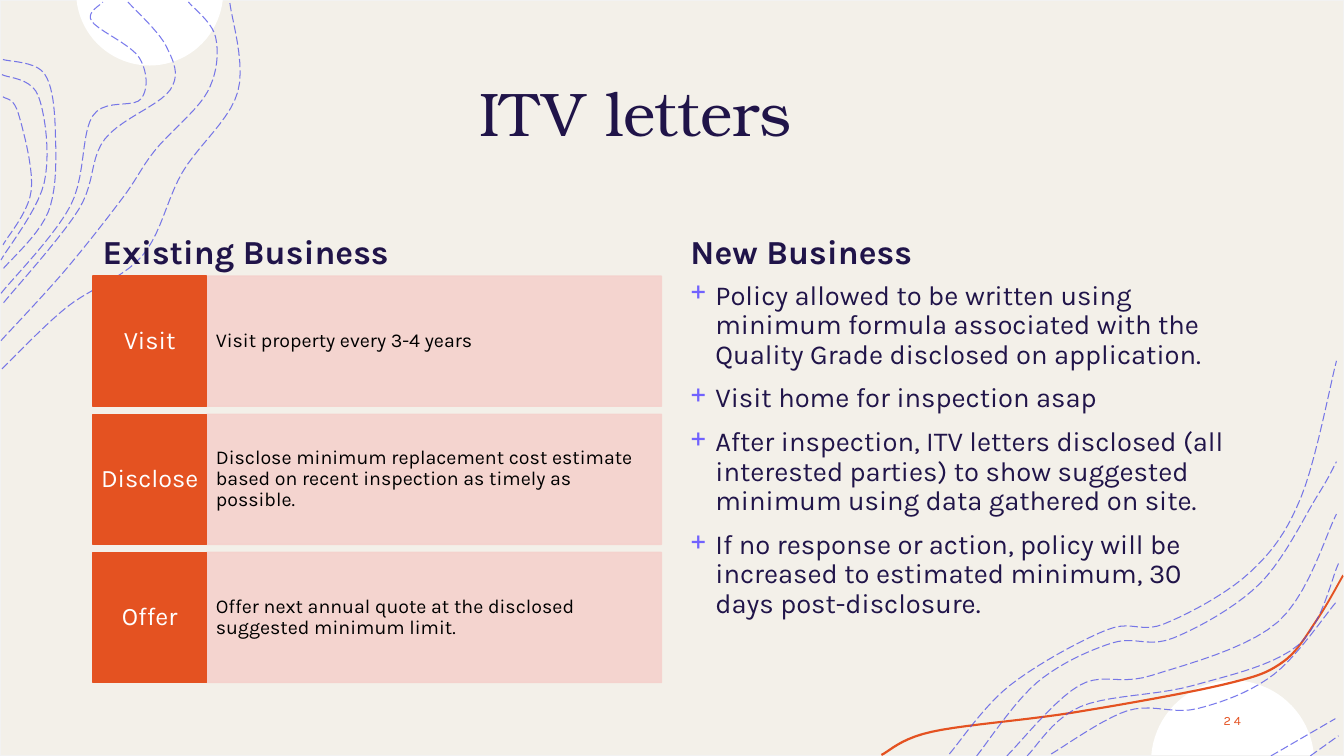
from dataclasses import dataclass
from math import asin, copysign, cos, pi, sin
from typing import Any, NamedTuple

from lxml.etree import SubElement as Sub
from pptx import Presentation
from pptx.dml.color import RGBColor as Rgb
from pptx.enum.dml import MSO_LINE as Dash
from pptx.enum.shapes import MSO_SHAPE as Kind
from pptx.enum.text import MSO_ANCHOR as Anchor, PP_ALIGN as Align
from pptx.oxml.ns import qn
from pptx.util import Cm, Pt

COLORS = {"sand": "F3F0E9", "edge": "F2F2F2", "white": "FFFFFF", "black": "000000",
          "orange": "E45221", "pink": "F5D1CD", "navy": "201449", "wave": "4D4EE6",
          "plus": "7162FE"}
SERIF, SANS = "TeX Gyre Bonum", "Karla"
UNIT = Cm(0.0254)  # curve points count hundredths of an inch
Points = list[tuple[float, float]]


class Box(NamedTuple):
    left: float
    top: float
    width: float
    height: float


@dataclass
class Style:
    size: float
    color: str
    face: str = SANS
    bold: bool = False
    align: Any = Align.LEFT
    anchor: Any = Anchor.MIDDLE
    lead: float = 1.0
    before: float = 0
    track: int = 0
    inset: tuple[float, float] = (0.25, 0.13)
    mark: str = ""


@dataclass
class Label:
    box: Box
    lines: list[str]
    style: Style


@dataclass
class Step:
    name: str
    text: str


HEAD = Style(24, "navy", bold=True, anchor=Anchor.BOTTOM, lead=1.1)
TAG = Style(18, "white", align=Align.CENTER, lead=0.9, inset=(0.15, 0.33))
NOTE = Style(14, "black", lead=0.9, inset=(0.23, 0.84))
LIST = Style(19.6, "navy", anchor=Anchor.TOP, lead=0.9, before=10, mark="+")

LABELS = [
    Label(Box(1.42, 0.99, 29.21, 3.68), ["ITV letters"],
          Style(44, "navy", SERIF, align=Align.CENTER)),
    Label(Box(2.34, 4.67, 14.33, 2.29), ["Existing Business"], HEAD),
    Label(Box(17.15, 4.67, 14.4, 2.29), ["New Business"], HEAD),
    Label(Box(17.15, 6.96, 14.4, 10.24), [
        "Policy allowed to be written using minimum formula associated with the "
        "Quality Grade disclosed on application.",
        "Visit home for inspection asap",
        "After inspection, ITV letters disclosed (all interested parties) to show "
        "suggested minimum using data gathered on site.",
        "If no response or action, policy will be increased to estimated minimum, "
        "30 days post-disclosure."], LIST),
    Label(Box(27.51, 17.65, 4.01, 1.02), ["24"],
          Style(9, "orange", align=Align.RIGHT, track=200)),
]
STEPS = [
    Step("Visit", "Visit property every 3-4 years"),
    Step("Disclose", "Disclose minimum replacement cost estimate based on recent "
                     "inspection as timely as possible."),
    Step("Offer", "Offer next annual quote at the disclosed suggested minimum limit."),
]
WAVES: list[Points] = [
    # Top left
    [(2, 366), (66, 305), (141, 254), (181, 171), (236, 91), (228, 2)],
    [(1, 338), (64, 269), (122, 196), (154, 149), (206, 91), (214, 37), (187, 2)],
    [(127, 2), (165, 46), (169, 89), (104, 138), (78, 208), (3, 301)],
    [(1, 291), (70, 204), (92, 115), (140, 98), (138, 57), (91, 21), (102, 2)],
    [(3, 59), (44, 73), (55, 132), (48, 210), (2, 268)],
    [(2, 74), (38, 95), (44, 181), (1, 258)],
    [(3, 96), (18, 112), (31, 189), (3, 243)],
    # Bottom right
    [(942, 748), (1002, 680), (1098, 625), (1155, 619), (1240, 568), (1291, 493), (1326, 358)],
    [(969, 750), (1029, 677), (1103, 638), (1164, 633), (1250, 579), (1307, 492), (1326, 458)],
    [(1300, 750), (1328, 730)],
    [(1261, 750), (1325, 713)],
    [(1043, 748), (1119, 705), (1188, 703), (1264, 669), (1326, 597)],
    [(1019, 750), (1072, 701), (1184, 680), (1288, 640), (1328, 559)],
    [(999, 750), (1071, 680), (1143, 670), (1268, 617), (1326, 510)],
]
RIBBON: Points = [(875, 750), (925, 727), (1065, 708), (1215, 680), (1273, 658), (1307, 616),
                  (1333, 572)]


def apply(target: Any, values: dict[str, Any]) -> None:
    for name, value in values.items():
        setattr(target, name, value)


def smooth(points: Points, parts: int = 10) -> Points:
    """Run a Catmull-Rom curve through the points."""
    ends = [points[0], *points, points[-1]]
    path = [points[0]]
    for quad in zip(ends, ends[1:], ends[2:], ends[3:]):
        for t in (n / parts for n in range(1, parts + 1)):
            path.append(tuple(
                b + ((c - a) * t + (2 * a - 5 * b + 4 * c - d) * t**2
                     + (3 * b - a - 3 * c + d) * t**3) / 2
                for a, b, c, d in zip(*quad)))
    return path


def arc(x: float, y: float, radius: float, edge: float) -> Points:
    """Trace the part of a circle that a level edge leaves in view."""
    start = asin((edge - y) / radius)
    sweep = copysign(pi, 375 - y) - 2 * start
    turns = [start + sweep * n / 40 for n in range(41)]
    return [(x + radius * cos(a), y + radius * sin(a)) for a in turns]


def paint(shape: Any, fill: str = "", line: str = "", width: float = 1, alpha: int = 100) -> None:
    shape.shadow.inherit = False
    for part, color in ((shape.fill, fill), (shape.line.fill, line)):
        if color:
            part.solid()
            part.fore_color.rgb = Rgb.from_string(COLORS[color])
        else:
            part.background()
    if line:
        shape.line.width = Pt(width)
    if alpha < 100:
        for node in list(shape._element.spPr.iter(qn("a:srgbClr"))):
            Sub(node, qn("a:alpha"), val=str(alpha * 1000))


def draw(shapes: Any, points: Points, closed: bool) -> Any:
    spots = [(round(x * UNIT), round(y * UNIT)) for x, y in points]
    pen = shapes.build_freeform(*spots[0])
    pen.add_line_segments(spots[1:], close=closed)
    return pen.convert_to_shape()


def write(shape: Any, lines: list[str], style: Style) -> None:
    frame = shape.text_frame
    side, rim = map(Cm, style.inset)
    apply(frame, {"word_wrap": True, "vertical_anchor": style.anchor, "margin_left": side,
                  "margin_right": side, "margin_top": rim, "margin_bottom": rim})
    for n, text in enumerate(lines):
        para = frame.add_paragraph() if n else frame.paragraphs[0]
        if style.mark:
            props = para._p.get_or_add_pPr()
            props.attrib.update({"marL": str(Cm(0.63)), "indent": str(-Cm(0.63))})
            Sub(Sub(props, qn("a:buClr")), qn("a:srgbClr"), val=COLORS["plus"])
            Sub(props, qn("a:buChar"), char=style.mark)
        apply(para, {"alignment": style.align, "line_spacing": style.lead,
                     "space_before": Pt(style.before if n else 0)})
        run = para.add_run()
        run.text = text
        apply(run.font, {"name": style.face, "size": Pt(style.size), "bold": style.bold})
        run.font.color.rgb = Rgb.from_string(COLORS[style.color])
        if style.track:
            run.font._element.set("spc", str(style.track))


def block(shapes: Any, box: Box, color: str, edge: str, alpha: int = 100) -> Any:
    shape = shapes.add_shape(Kind.RECTANGLE, *map(Cm, box))
    paint(shape, color, edge, alpha=alpha)
    return shape


def main() -> None:
    deck = Presentation()
    apply(deck, {"slide_width": Cm(33.87), "slide_height": Cm(19.05)})
    shapes = deck.slides.add_slide(deck.slide_layouts[6]).shapes

    # Backdrop
    block(shapes, Box(0, 0, 33.87, 19.05), "sand", "edge")
    for disc in (arc(148.5, -8, 73, 0), arc(1223, 756, 81, 749)):
        paint(draw(shapes, disc, True), "white")
    lower = smooth(RIBBON)
    upper = [(x - 1, y - 2) for x, y in reversed(lower)]
    paint(draw(shapes, lower + upper, True), "orange")
    for points in WAVES:
        wave = draw(shapes, smooth(points), False)
        paint(wave, line="wave", width=0.75, alpha=75)
        wave.line.dash_style = Dash.LONG_DASH

    # Steps
    for n, step in enumerate(STEPS):
        top = 6.96 + 3.48 * n
        panel = block(shapes, Box(5.21, top, 11.46, 3.28), "pink", "pink", 90)
        write(panel, [step.text], NOTE)
        write(block(shapes, Box(2.34, top, 2.87, 3.28), "orange", "orange"), [step.name], TAG)

    # Title, headings, list and page number
    for label in LABELS:
        write(shapes.add_textbox(*map(Cm, label.box)), label.lines, label.style)

    deck.save("out.pptx")


if __name__ == "__main__":
    main()
